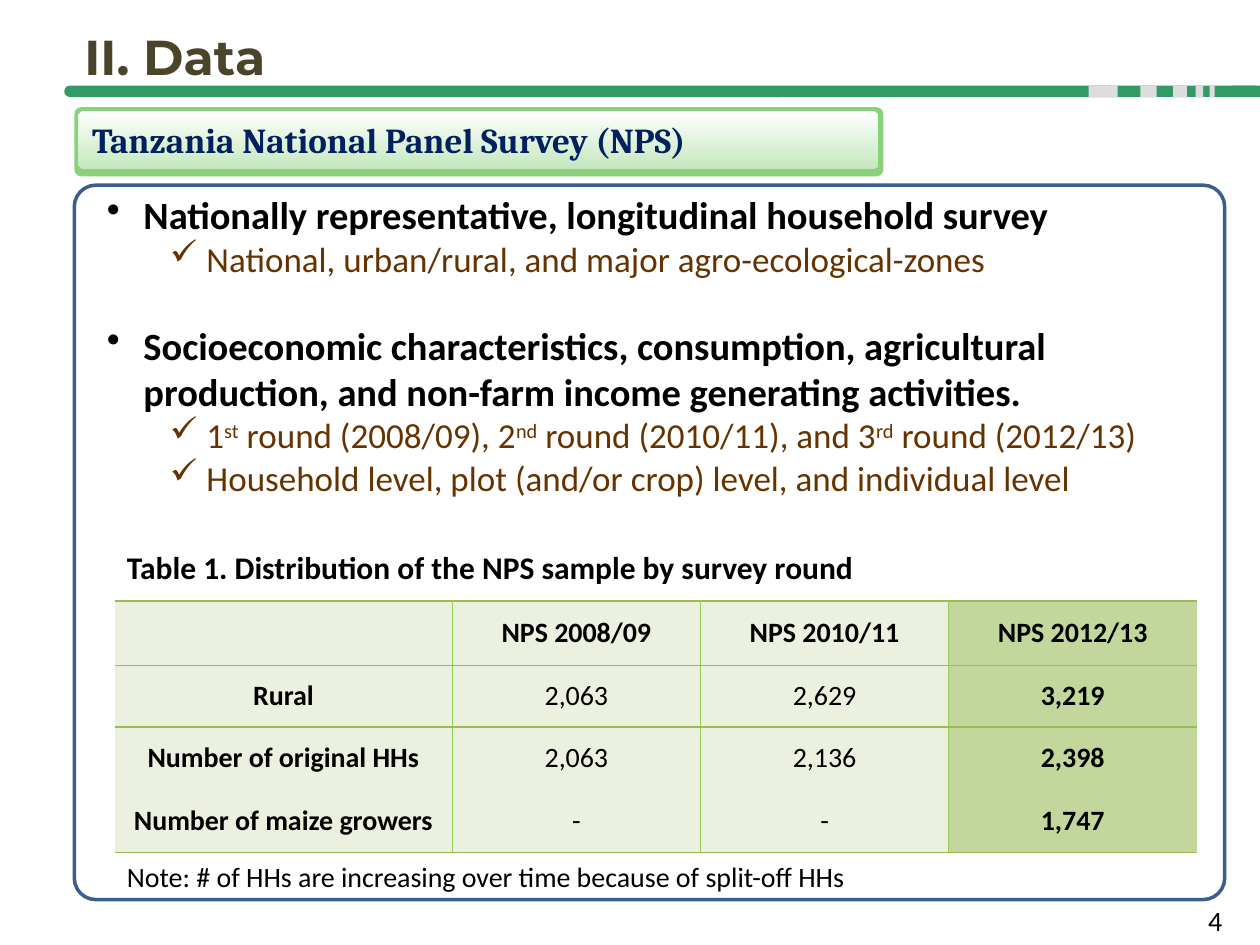
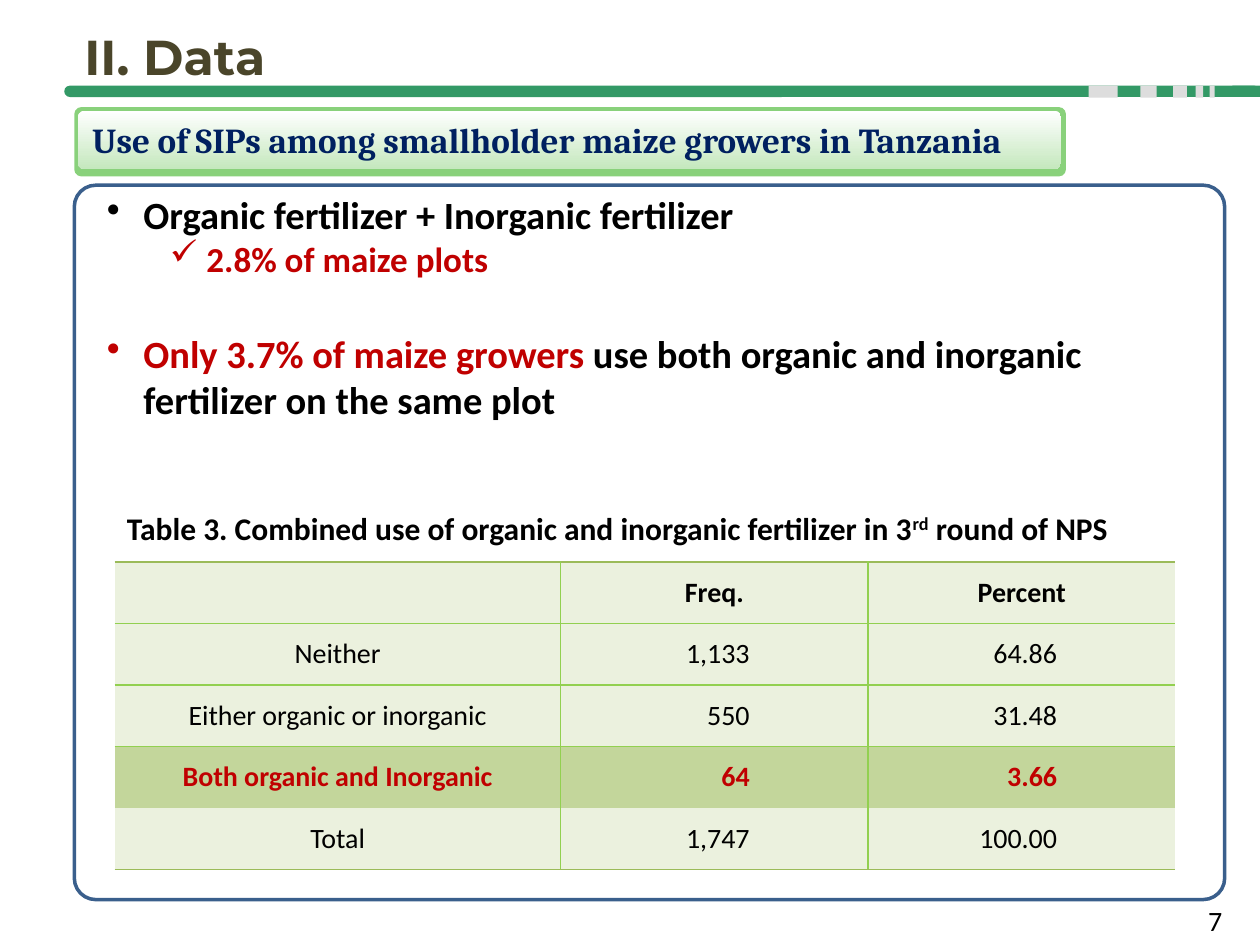
from lxml import etree
from pptx import Presentation, util as u
from pptx.dml.color import RGBColor
from pptx.enum import shapes, text
from pptx.oxml.ns import qn

GREEN = RGBColor(0x33, 0x99, 0x66)
GREY = RGBColor(0xDD, 0xDD, 0xDD)
OLIVE = RGBColor(0x4A, 0x45, 0x2A)
BLUE = RGBColor(0x3A, 0x5F, 0x8C)
NAVY = RGBColor(0x00, 0x20, 0x60)
LEAF = RGBColor(0x89, 0xD1, 0x7B)
MINT = RGBColor(0xC5, 0xE8, 0xBE)
PALE = RGBColor(0xEB, 0xF1, 0xDE)
MOSS = RGBColor(0xC3, 0xD6, 0x9B)
SAGE = RGBColor(0x9B, 0xBB, 0x59)
LIME = RGBColor(0x92, 0xD0, 0x50)
BROWN = RGBColor(0x66, 0x33, 0x00)
RED = RGBColor(0xC0, 0x00, 0x00)
BLACK = RGBColor(0, 0, 0)
WHITE = RGBColor(255, 255, 255)

PLAIN = "{2D5ABB26-0587-4C30-8999-92F81FD0307C}"  # table style without lines
RECT = shapes.MSO_SHAPE.RECTANGLE
ROUND = shapes.MSO_SHAPE.ROUNDED_RECTANGLE
LEFT, MID, RIGHT = text.PP_ALIGN.LEFT, text.PP_ALIGN.CENTER, text.PP_ALIGN.RIGHT

prs = Presentation()
prs.slide_width, prs.slide_height = u.Inches(10), u.Inches(7.5)
COL, ROW = prs.slide_width / 100, prs.slide_height / 75


def place(x, y, w, h):
    """Turn grid columns and rows into slide lengths."""
    return int(x * COL), int(y * ROW), int(w * COL), int(h * ROW)


def write(par, words, size, color=BLACK, bold=False, name="Calibri", align=LEFT, mark=None):
    """Fill a paragraph; pieces split by | may start with ^ (raised) or ~ (black)."""
    par.alignment = align
    if mark:
        props = par._p.get_or_add_pPr()
        props.set("marL", str(u.Inches(0.29 if mark == "•" else 0.79)))
        props.set("indent", str(u.Inches(-0.29)))
        etree.SubElement(props, qn("a:buChar")).set("char", mark)
    font = par.font
    font.size, font.bold, font.name = u.Pt(size), bold, name
    font.color.rgb = color
    for piece in words.split("|"):
        run = par.add_run()
        run.text = piece.lstrip("^~")
        if piece[0] == "^":
            run.font._element.set("baseline", "30000")
        elif piece[0] == "~":
            run.font.color.rgb = BLACK


# Bars of the top band: shape, left, width, height, colour
bars = [(ROUND, 5.1, 94.9, 0.9, GREEN), (RECT, 97.8, 2.2, 0.9, GREEN)]
bars += [(RECT, x, w, 0.95, GREY) for x, w in
         [(86.4, 2.3), (90.5, 1.3), (93.1, 1.1), (94.9, 0.6), (96, 0.4)]]

# Points: bullet, words, size, colour, bold, space before
# Notes: top, words, size, bold
# Lines: colour by edge number, "down" between columns, "over" between rows
pages = [
    dict(
        num="4", head="Tanzania National Panel Survey (NPS)", wide=64.2,
        lists=[(14.7, 25.6, [
            ("•", "Nationally representative, longitudinal household survey", 22, BLACK, True, 0),
            ("✓", "National, urban/rural, and major agro-ecological-zones", 20, BROWN, False, 0),
            ("•", "Socioeconomic characteristics, consumption, agricultural production, "
                  "and non-farm income generating activities.", 22, BLACK, True, 24),
            ("✓", "1|^st| round (2008/09), 2|^nd| round (2010/11), and 3|^rd| round (2012/13)",
             20, BROWN, False, 0),
            ("✓", "Household level, plot (and/or crop) level, and individual level",
             20, BROWN, False, 0)])],
        notes=[(43, "Table 1. Distribution of the NPS sample by survey round", 18, True),
               (67.7, "Note: # of HHs are increasing over time because of split-off HHs", 16, False)],
        cells=[("", "NPS 2008/09", "NPS 2010/11", "NPS 2012/13"),
               ("Rural", "2,063", "2,629", "3,219"),
               ("Number of original HHs", "2,063", "2,136", "2,398"),
               ("Number of maize growers", "-", "-", "1,747")],
        top=47.7, cols=[26.8, 19.7, 19.7, 19.7], rows=[5.1, 4.9, 4.9, 5.05],
        down={1: LIME, 2: LIME}, over={0: SAGE, 1: SAGE, 4: SAGE},
        heavy=(0, 3), hot_col=3, hot_row=None, pad=None),
    dict(
        num="7", head="Use of SIPs among smallholder maize growers in Tanzania", wide=78.7,
        lists=[(14.7, 8.1, [
            ("•", "Organic fertilizer + Inorganic fertilizer", 22, BLACK, True, 0),
            ("✓", "2.8% of maize plots", 20, RED, True, 0)]),
            (25.7, 8.4, [
                ("•", "Only 3.7% of maize growers|~ use both organic and inorganic "
                      "fertilizer on the same plot", 22, RED, True, 0)])],
        notes=[(39.9, "Table 3. Combined use of organic and inorganic fertilizer in 3|^rd| round of NPS",
                18, True)],
        cells=[("", "Freq.", "Percent"),
               ("Neither", "1,133", "64.86"),
               ("Either organic or inorganic", "550", "31.48"),
               ("Both organic and Inorganic", "64", "3.66"),
               ("Total", "1,747", "100.00")],
        top=44.6, cols=[35.4, 24.4, 24.4], rows=[4.88] * 5,
        down={1: LIME, 2: LIME}, over={0: SAGE, 1: LIME, 2: LIME, 5: SAGE},
        heavy=(), hot_col=None, hot_row=3, pad=0.94),
]

for page in pages:
    slide = prs.slides.add_slide(prs.slide_layouts[5])
    draw = slide.shapes

    for kind, x, w, h, color in bars:
        bar = draw.add_shape(kind, *place(x, 6.8, w, h))
        bar.shadow.inherit = False
        bar.fill.solid()
        bar.fill.fore_color.rgb = color
        bar.line.fill.background()
        if kind == ROUND:
            bar.adjustments[0] = 0.5

    title = draw.title
    title.left, title.top, title.width, title.height = place(5.7, 2.4, 91.5, 4)
    title.text_frame.auto_size = text.MSO_AUTO_SIZE.NONE
    title.text_frame.vertical_anchor = text.MSO_ANCHOR.MIDDLE
    write(title.text_frame.paragraphs[0], "II. Data", 28, OLIVE, True, "Montserrat")

    num = draw.add_textbox(*place(74.7, 71.2, 23.3, 4))
    write(num.text_frame.paragraphs[0], page["num"], 16, align=RIGHT)

    panel = draw.add_shape(ROUND, *place(5.9, 14.7, 91.3, 56.7))
    panel.adjustments[0] = 0.03
    panel.shadow.inherit = False
    panel.fill.background()
    panel.line.color.rgb = BLUE
    panel.line.width = u.Pt(2)

    rim = draw.add_shape(ROUND, *place(5.9, 8.5, page["wide"], 5.5))
    rim.fill.solid()
    rim.fill.fore_color.rgb = LEAF
    head = draw.add_shape(ROUND, *place(6.2, 8.8, page["wide"] - 0.7, 4.6))
    head.fill.gradient()
    head.fill.gradient_angle = 270
    for stop, color, spot in zip(head.fill.gradient_stops, (WHITE, MINT), (0, 1)):
        stop.color.rgb = color
        stop.position = spot
    for tab in (rim, head):
        tab.adjustments[0] = 0.1
        tab.shadow.inherit = False
        tab.line.fill.background()
    write(head.text_frame.paragraphs[0], page["head"], 20, NAVY, True, "Cambria")

    for top, high, points in page["lists"]:
        frame = draw.add_textbox(*place(7.5, top, 89.8, high)).text_frame
        frame.word_wrap = True
        for i, (mark, words, size, color, bold, gap) in enumerate(points):
            par = frame.add_paragraph() if i else frame.paragraphs[0]
            if gap:
                par.space_before = u.Pt(gap)
            write(par, words, size, color, bold, mark=mark)

    for top, words, size, bold in page["notes"]:
        frame = draw.add_textbox(*place(9.1, top, 86.6, 4)).text_frame
        frame.word_wrap = True
        write(frame.paragraphs[0], words, size, bold=bold)

    cells, cols, rows = page["cells"], page["cols"], page["rows"]
    grid = draw.add_table(len(rows), len(cols), *place(9.1, page["top"], sum(cols), sum(rows))).table
    grid.first_row = grid.horz_banding = False
    grid._tbl.tblPr.find(qn("a:tableStyleId")).text = PLAIN
    for c, wide in enumerate(cols):
        grid.columns[c].width = int(wide * COL)
    for r, high in enumerate(rows):
        grid.rows[r].height = int(high * ROW)
        for c, words in enumerate(cells[r]):
            cell = grid.cell(r, c)
            cell.vertical_anchor = text.MSO_ANCHOR.MIDDLE
            align = MID
            if page["pad"]:
                cell.margin_left = cell.margin_right = u.Inches(0.07)
                cell.margin_top = cell.margin_bottom = 0
                if r and c:
                    cell.margin_right = u.Inches(page["pad"])
                    align = RIGHT
            edges = [("a:lnL", page["down"].get(c)), ("a:lnR", page["down"].get(c + 1)),
                     ("a:lnT", page["over"].get(r)), ("a:lnB", page["over"].get(r + 1))]
            for tag, color in edges:
                if color:
                    line = etree.SubElement(cell._tc.get_or_add_tcPr(), qn(tag), w=str(u.Pt(1)))
                    fill = etree.SubElement(line, qn("a:solidFill"))
                    etree.SubElement(fill, qn("a:srgbClr"), val=str(color))
            hot = r == page["hot_row"]
            cell.fill.solid()
            cell.fill.fore_color.rgb = MOSS if hot or c == page["hot_col"] else PALE
            if words:
                write(cell.text_frame.paragraphs[0], words, 16, RED if hot else BLACK,
                      r == 0 or hot or c in page["heavy"], align=align)

prs.save("out.pptx")
